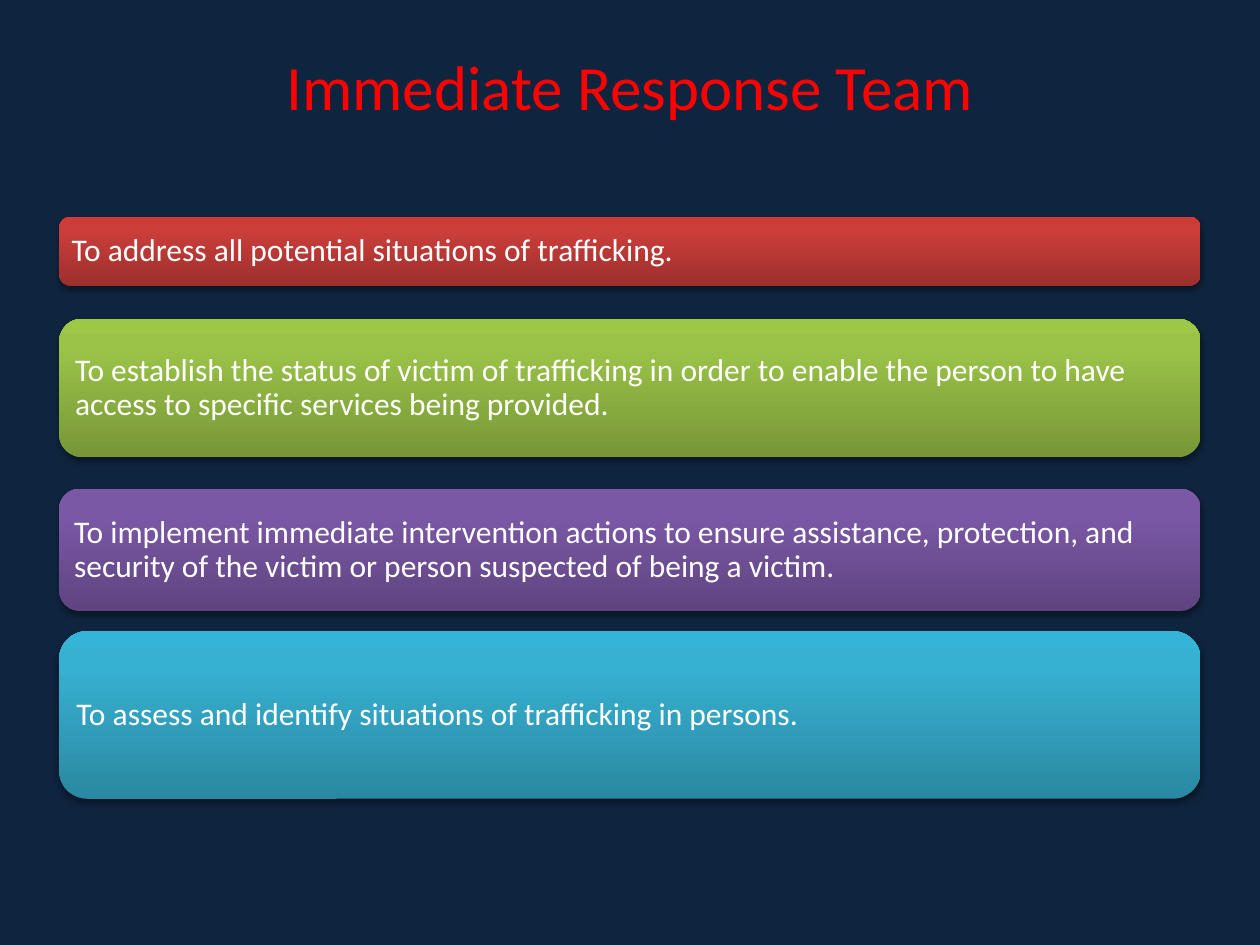
from lxml import etree
from pptx import Presentation, util as u
from pptx.dml.color import RGBColor
from pptx.enum import shapes, text
from pptx.oxml import parse_xml
from pptx.oxml.ns import nsdecls, qn

W, H = 10, 7.5
FONT = "Calibri"
COLORS = {"background": "0F243E", "title": "FF0000", "text": "FFFFFF", "shadow": "000000"}
GRADIENTS = {  # bottom, 80 %, top
    "red": ("9C2F2D", "CB3E3A", "CE3B37"),
    "green": ("779737", "9BC348", "9DC746"),
    "purple": ("5F4480", "7B58A6", "7C57A8"),
    "blue": ("2A88A2", "37B1D2", "34B4D6"),
}
# Top and height within the card area, gradient, wording
CARDS = [
    (0, 0.55, "red", "To address all potential situations of trafficking."),
    (0.81, 1.1, "green", "To establish the status of victim of trafficking in order to "
     "enable the person to have access to specific services being provided."),
    (2.16, 0.97, "purple", "To implement immediate intervention actions to ensure assistance, "
     "protection, and security of the victim or person suspected of being a victim."),
    (3.29, 1.33, "blue", "To assess and identify situations of trafficking in persons."),
]
CORNER_INSET = 0.05  # text inset as a share of card height


def inches(*values):
    return [u.Inches(v) for v in values]


def add_run(p, wording, size, color):
    r = p.add_run()
    r.text = wording
    r.font.name, r.font.size = FONT, u.Pt(size)
    r.font.color.rgb = RGBColor.from_string(COLORS[color])


def style_card(sp, gradient):
    """Vertical three-stop gradient and soft shadow below."""
    sp.line.fill.background()
    stops = "".join(f'<a:gs pos="{pos}"><a:srgbClr val="{c}"/></a:gs>'
                    for pos, c in zip((0, 80000, 100000), GRADIENTS[gradient]))
    fill = parse_xml(f'<a:gradFill {nsdecls("a")} rotWithShape="1"><a:gsLst>{stops}</a:gsLst>'
                     '<a:lin ang="16200000" scaled="0"/></a:gradFill>')
    shadow = parse_xml(
        f'<a:effectLst {nsdecls("a")}><a:outerShdw blurRad="40000" dist="23000" dir="5400000" '
        f'rotWithShape="0"><a:srgbClr val="{COLORS["shadow"]}"><a:alpha val="35000"/>'
        '</a:srgbClr></a:outerShdw></a:effectLst>')
    pr = sp._element.spPr
    pr.find(qn("a:prstGeom")).addnext(fill)
    pr.append(shadow)


def add_title(s, x, y, w, h):
    sp = s.shapes.title
    sp.left, sp.top, sp.width, sp.height = inches(x, y, w, h)
    tf = sp.text_frame
    tf.auto_size = text.MSO_AUTO_SIZE.NONE
    tf.vertical_anchor = text.MSO_ANCHOR.MIDDLE
    p = tf.paragraphs[0]
    p.alignment = text.PP_ALIGN.CENTER
    add_run(p, "Immediate Response Team", 36, "title")
    # The closing line break lifts the heading within its box
    p.add_line_break()
    etree.SubElement(p._p[-1], qn("a:rPr"), sz="3600")
    etree.SubElement(p._p, qn("a:endParaRPr"), sz="3600")


def add_card(group, x, y, w, h, gradient, wording):
    sp = group.shapes.add_shape(shapes.MSO_SHAPE.ROUNDED_RECTANGLE, *inches(x, y, w, h))
    style_card(sp, gradient)
    d = CORNER_INSET * h
    box = group.shapes.add_textbox(*inches(x + d, y + d, w - 2 * d, h - 2 * d))
    tf = box.text_frame
    tf.word_wrap = True
    tf.vertical_anchor = text.MSO_ANCHOR.MIDDLE
    tf.margin_left = tf.margin_right = tf.margin_top = tf.margin_bottom = u.Inches(0.07)
    p = tf.paragraphs[0]
    p.line_spacing = 0.9
    add_run(p, wording, 18, "text")


def add_card_list(s, x, y, w):
    group = s.shapes.add_group_shape()
    for top, h, gradient, wording in CARDS:
        add_card(group, x, y + top, w, h, gradient, wording)


def main():
    prs = Presentation()
    prs.slide_width, prs.slide_height = inches(W, H)
    s = prs.slides.add_slide(prs.slide_layouts[5])
    s.background.fill.solid()
    s.background.fill.fore_color.rgb = RGBColor.from_string(COLORS["background"])
    add_title(s, 0.075 * W, 0.47, 0.85 * W, 1.02)
    add_card_list(s, 0.047 * W, 1.72, 0.906 * W)
    prs.save("out.pptx")


if __name__ == "__main__":
    main()
